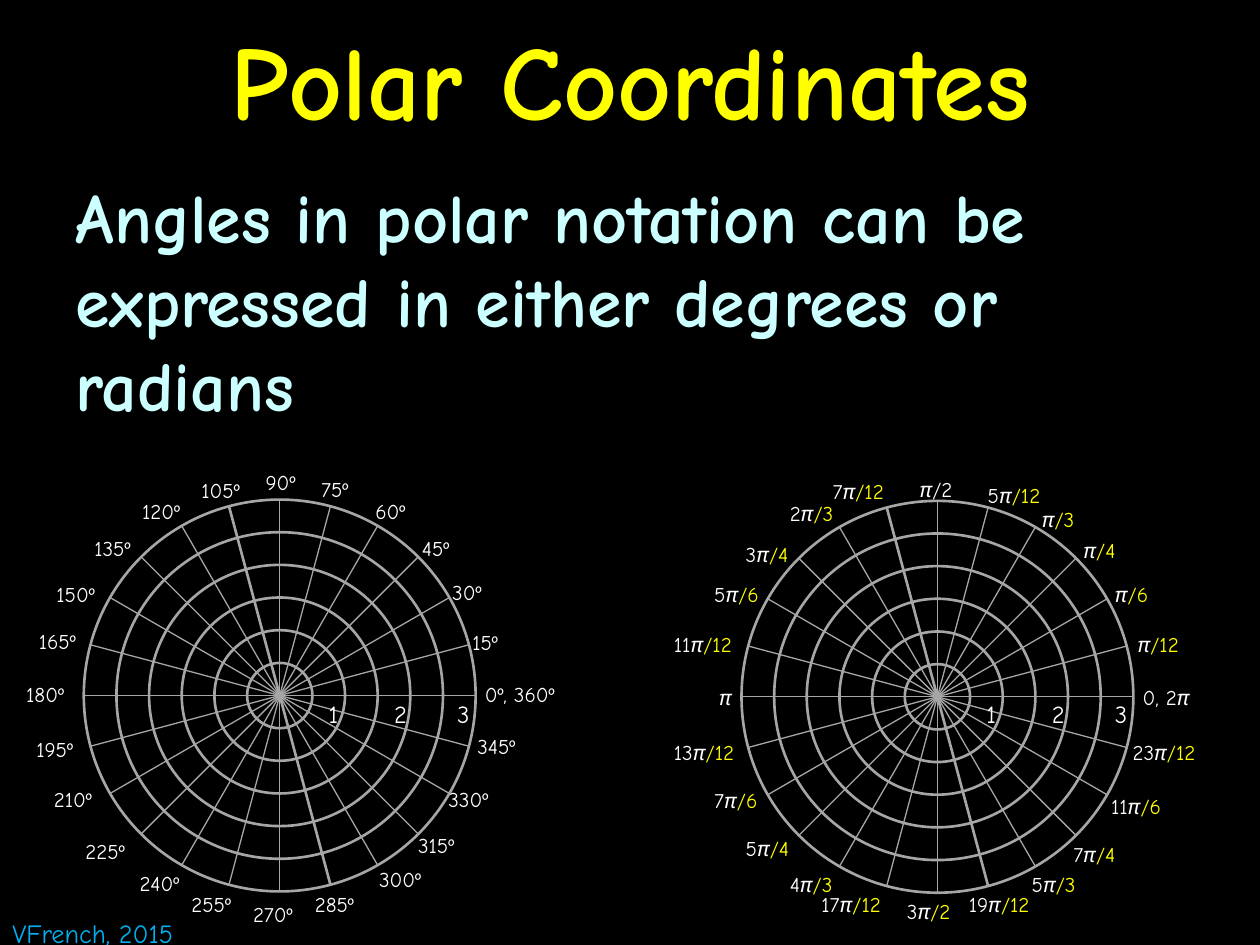
from math import cos, radians, sin

from lxml import etree
from pptx import Presentation
from pptx.dml.color import RGBColor
from pptx.enum.shapes import MSO_CONNECTOR, MSO_SHAPE
from pptx.enum.text import MSO_ANCHOR, MSO_AUTO_SIZE, PP_ALIGN
from pptx.oxml.ns import qn
from pptx.util import Pt

STRAIGHT, OVAL = MSO_CONNECTOR.STRAIGHT, MSO_SHAPE.OVAL
MIDDLE, TOP = MSO_ANCHOR.MIDDLE, MSO_ANCHOR.TOP
CENTER, LEFT = PP_ALIGN.CENTER, PP_ALIGN.LEFT
GROW, NO_FIT = MSO_AUTO_SIZE.SHAPE_TO_FIT_TEXT, MSO_AUTO_SIZE.NONE

FONT = "Comic Neue"
WHITE, YELLOW, GRAY = "FFFFFF", "FFFF00", "A6A6A6"

TITLE = "Polar Coordinates"
BODY = "Angles in polar notation can be expressed in either degrees or radians"
CREDIT = ("VFrench, 2015", 0, 723, 162, 35)

DEGREES = [
    ("0º, 360º", 375, 536, 86), ("15º", 365, 495, 46), ("30º", 349, 455, 48),
    ("45º", 325, 420, 48), ("60º", 288, 391, 48), ("75º", 245, 373, 48),
    ("90º", 201, 368, 48), ("105º", 150, 374, 56), ("120º", 103, 391, 56),
    ("135º", 65, 420, 56), ("150º", 35, 457, 56), ("165º", 21, 494, 56),
    ("180º", 11, 536, 56), ("195º", 19, 580, 56), ("210º", 33, 619, 56),
    ("225º", 58, 661, 59), ("240º", 101, 686, 59), ("255º", 142, 703, 59),
    ("270º", 191, 711, 59), ("285º", 240, 703, 59), ("300º", 291, 683, 59),
    ("315º", 322, 656, 56), ("330º", 346, 619, 59), ("345º", 369, 577, 59),
]
RADIANS = [
    ("0, 2π", 897, 538, 61), ("π/12", 893, 496, 57), ("π/6", 875, 457, 50),
    ("π/4", 850, 422, 50), ("π/3", 817, 397, 50), ("5π/12", 774, 378, 68),
    ("π/2", 720, 373, 50), ("7π/12", 651, 375, 74), ("2π/3", 617, 392, 60),
    ("3π/4", 582, 425, 60), ("5π/6", 557, 457, 60), ("11π/12", 525, 496, 72),
    ("π", 561, 538, 31), ("13π/12", 525, 582, 75), ("7π/6", 557, 620, 60),
    ("5π/4", 582, 658, 60), ("4π/3", 617, 687, 60), ("17π/12", 642, 703, 75),
    ("3π/2", 710, 708, 60), ("19π/12", 759, 703, 75), ("5π/3", 809, 687, 60),
    ("7π/4", 842, 663, 60), ("11π/6", 872, 625, 65), ("23π/12", 889, 582, 78),
]
CHARTS = [(222, 552, DEGREES), (744, 553, RADIANS)]
RING_LABELS = [("1", 29, 29), ("2", 81, 32), ("3", 131, 32)]
RADIUS, RINGS, SPOKES, HEAVY_SPOKE = 155.5, 6, 12, 5


def px(n):
    return round(n * 9144)


def color(value):
    return RGBColor.from_string(value)


def add_run(p, text, size, fill, **extra):
    r = p.add_run()
    r.text = text
    for name, value in {"name": FONT, "size": Pt(size), **extra}.items():
        setattr(r.font, name, value)
    r.font.color.rgb = color(fill)


def place(sp, *box):
    for name, value in zip(("left", "top", "width", "height"), box):
        setattr(sp, name, px(value))


def fill_placeholder(sp, box, text, size, fill, align, anchor):
    place(sp, *box)
    tf = sp.text_frame
    for name, value in {"auto_size": NO_FIT, "word_wrap": True,
                        "vertical_anchor": anchor}.items():
        setattr(tf, name, value)
    p = tf.paragraphs[0]
    p.alignment = align
    add_run(p, text, size, fill, bold=True)
    return p


def add_label(shapes, text, x, y, w, h, size, fill, tail_fill=None):
    tf = shapes.add_textbox(px(x), px(y), px(w), px(h)).text_frame
    tf.word_wrap = False
    tf.auto_size = GROW
    p = tf.paragraphs[0]
    head, pi, tail = text.partition("π")
    if head:
        add_run(p, head, size, fill)
    if pi:
        add_run(p, pi, size, fill, italic=True)
    if tail:
        add_run(p, tail, size, tail_fill)


def add_spoke(shapes, cx, cy, k):
    angle = radians(180 / SPOKES * k)
    dx, dy = RADIUS * cos(angle), RADIUS * sin(angle)
    line = shapes.add_connector(STRAIGHT, px(cx - dx), px(cy - dy),
                                px(cx + dx), px(cy + dy))
    line.line.color.rgb = color(GRAY)
    line.line.width = Pt(1.5 if k == HEAVY_SPOKE else 0.75)
    etree.SubElement(line._element.spPr, qn("a:effectLst"))


def add_ring(shapes, cx, cy, r):
    ring = shapes.add_shape(OVAL, px(cx - r), px(cy - r), px(2 * r), px(2 * r))
    ring.shadow.inherit = False
    ring.fill.background()
    ring.line.color.rgb = color(GRAY)
    ring.line.width = Pt(1.5)


def add_polar_chart(s, cx, cy, labels):
    shapes = s.shapes.add_group_shape().shapes
    for text, x, y, w in labels:
        tail_fill = WHITE if text == "π/2" else YELLOW
        add_label(shapes, text, x, y, w, 30, 12, WHITE, tail_fill)
    for k in range(SPOKES):
        add_spoke(shapes, cx, cy, k)
    for i in range(1, RINGS + 1):
        add_ring(shapes, cx, cy, RADIUS * i / RINGS)
    for text, dx, w in RING_LABELS:
        add_label(shapes, text, cx + dx, 550, w, 34, 14, WHITE)


def main():
    prs = Presentation()
    prs.slide_width, prs.slide_height = px(1000), px(750)
    s = prs.slides.add_slide(prs.slide_layouts[1])
    s.background.fill.solid()
    s.background.fill.fore_color.rgb = color("000000")

    fill_placeholder(s.shapes.title, (0, 0, 1000, 125), TITLE, 60, YELLOW,
                     CENTER, MIDDLE)
    p = fill_placeholder(s.placeholders[1], (50, 133, 900, 617), BODY, 40,
                         "CCFFFF", LEFT, TOP)
    p.space_before = Pt(8)
    pPr = p._p.get_or_add_pPr()
    pPr.set("marL", "0")
    pPr.set("indent", "0")
    etree.SubElement(pPr, qn("a:buNone"))

    add_label(s.shapes, *CREDIT, 15, "00B0F0")
    for cx, cy, labels in CHARTS:
        add_polar_chart(s, cx, cy, labels)
    prs.save("out.pptx")


if __name__ == "__main__":
    main()
